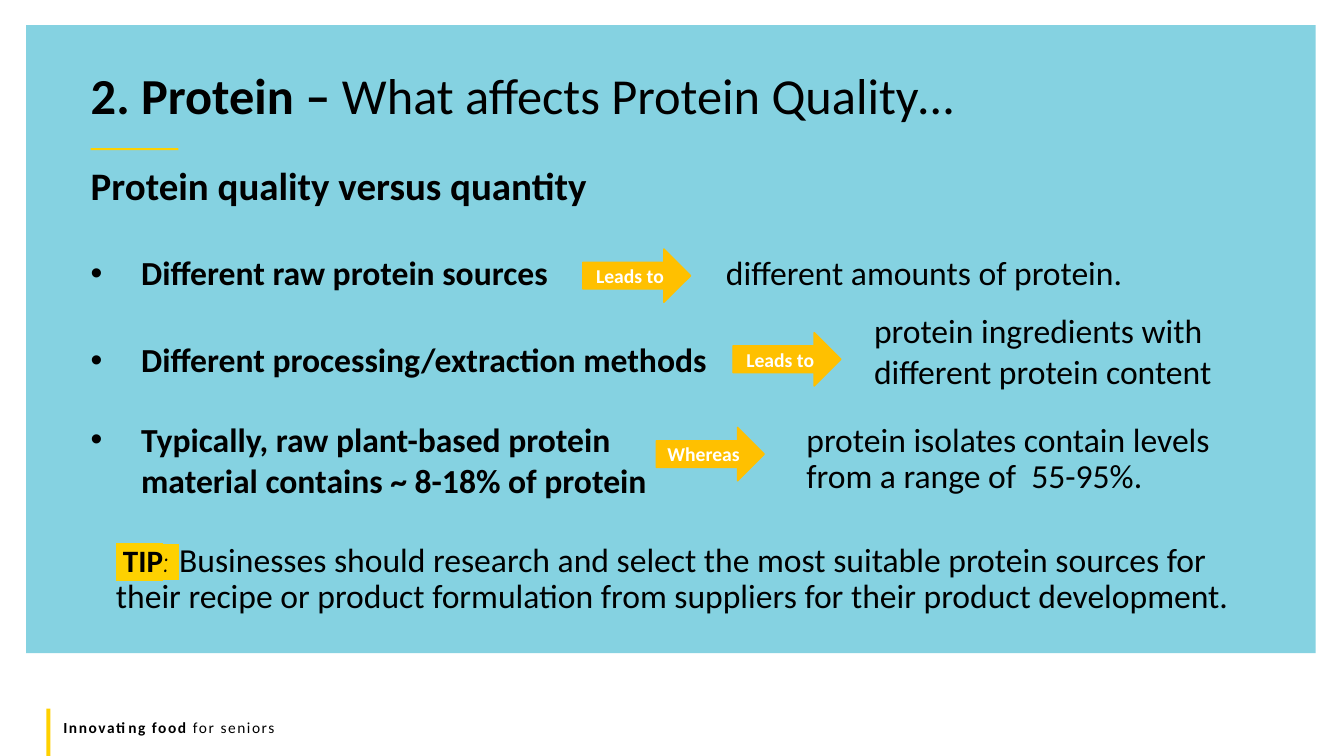
import pptx
import pptx.dml.color
import pptx.enum.shapes
import pptx.enum.text
import pptx.oxml
import pptx.oxml.ns
import pptx.util
from pptx.util import Inches

COLORS = {
    "panel": "85D2E1",
    "accent": "FFD100",
    "tip": "FED100",
    "arrow": "FFC000",
    "text": "000000",
    "arrow_text": "FFFFFF",
}
ANCHOR = pptx.enum.text.MSO_ANCHOR
SHAPE = pptx.enum.shapes.MSO_SHAPE


def rgb(name):
    return pptx.dml.color.RGBColor.from_string(COLORS[name])


def add_xml(parent, tag, **attributes):
    element = pptx.oxml.parse_xml(f"<a:{tag} {pptx.oxml.ns.nsdecls('a')}/>")
    for key, value in attributes.items():
        element.set(key, str(value))
    parent.append(element)
    return element


def add_span(para, text, size=24, bold=False, color="text", font="Calibri",
             highlight=None, spacing=None):
    """Append formatted text to a paragraph."""
    span = para.add_run()
    span.text = text
    span.font.size = pptx.util.Pt(size)
    span.font.bold = bold
    span.font.color.rgb = rgb(color)
    properties = span.font._element
    if spacing:
        properties.set("spc", str(spacing))
    if highlight:
        add_xml(add_xml(properties, "highlight"), "srgbClr", val=COLORS[highlight])
    span.font.name = font


def format_para(para, before=0, line=1.0, margin=0, bullet=False, tab=None):
    """Set spacing, indent, bullet and tab stop; margin is in inches."""
    properties = para._p.get_or_add_pPr()
    properties.set("marL", str(Inches(margin)))
    properties.set("indent", str(-Inches(margin) if bullet else 0))
    if bullet:
        add_xml(properties, "buFont", typeface="Arial")
        add_xml(properties, "buChar", char="•")
    else:
        add_xml(properties, "buNone")
    if tab:
        add_xml(add_xml(properties, "tabLst"), "tab", pos=Inches(tab), algn="l")
    para.space_before = pptx.util.Pt(before)
    para.line_spacing = line


def place(box, left, top, width, height):
    box.left, box.top = Inches(left), Inches(top)
    box.width, box.height = Inches(width), Inches(height)
    frame = box.text_frame
    frame.word_wrap = True
    frame.auto_size = pptx.enum.text.MSO_AUTO_SIZE.NONE
    frame.vertical_anchor = ANCHOR.TOP
    return frame


def add_block(slide, kind, left, top, width, height, color):
    block = slide.shapes.add_shape(
        kind, Inches(left), Inches(top), Inches(width), Inches(height))
    block.shadow.inherit = False
    block.fill.solid()
    block.fill.fore_color.rgb = rgb(color)
    block.line.fill.background()
    return block


def add_arrow(slide, left, top, label):
    arrow = add_block(slide, SHAPE.RIGHT_ARROW, left, top, 1.07, 0.53, "arrow")
    arrow.line.color.rgb = rgb("arrow")
    arrow.line.width = pptx.util.Pt(1)
    frame = arrow.text_frame
    frame.word_wrap = False
    frame.vertical_anchor = ANCHOR.MIDDLE
    para = frame.paragraphs[0]
    para.alignment = pptx.enum.text.PP_ALIGN.CENTER
    add_span(para, label, size=14, bold=True, color="arrow_text")


def add_text(slide, left, top, width, height, spans, line=1.0):
    box = slide.shapes.add_textbox(0, 0, 0, 0)
    para = place(box, left, top, width, height).paragraphs[0]
    format_para(para, line=line)
    for text, style in spans:
        add_span(para, text, **style)


def fill_title(title):
    para = place(title, 0.8, 0.7, 11.82, 0.64).paragraphs[0]
    format_para(para, line=0.8)
    para.alignment = pptx.enum.text.PP_ALIGN.LEFT
    add_span(para, "2. Protein – ", size=36, bold=True)
    add_span(para, "What affects Protein Quality…", size=36)


def fill_body(body):
    frame = place(body, 0.8, 1.61, 11.82, 4.74)
    heading = frame.paragraphs[0]
    format_para(heading, line=0.9)
    add_span(heading, "Protein quality versus quantity", size=27.8, bold=True)

    bullets = [
        ("Different raw protein sources", "different amounts of protein.", 34, 0.9),
        ("Different processing/extraction methods", None, 36, 0.9),
        ("Typically, raw plant-based protein", "material contains ~ 8-18% of protein", 28, 1.0),
    ]
    for index, (text, rest, before, line) in enumerate(bullets):
        para = frame.add_paragraph()
        format_para(para, before, line, margin=0.5, bullet=True,
                    tab=6.3 if index == 0 else None)
        add_span(para, text, bold=True)
        if index == 0:
            add_span(para, "\t" + rest)
        elif rest:
            para.add_line_break()
            add_span(para, rest, bold=True)

    tip = frame.add_paragraph()
    format_para(tip, before=31, line=0.9, margin=0.25)
    add_span(tip, " TIP", size=22.2, bold=True, highlight="tip")
    add_span(tip, ": ", size=22.2, font="Comic Neue", highlight="tip")
    add_span(tip, "Businesses should research and select the most suitable protein "
                  "sources for their recipe or product formulation from suppliers "
                  "for their product development.")


def main():
    deck = pptx.Presentation()
    deck.slide_width, deck.slide_height = Inches(13.33), Inches(7.5)
    slide = deck.slides.add_slide(deck.slide_layouts[1])
    title, body = slide.placeholders

    panel = add_block(slide, SHAPE.RECTANGLE, 0.26, 0.25, 12.79, 6.23, "panel")
    slide.shapes._spTree.insert(2, panel._element)
    add_block(slide, SHAPE.RECTANGLE, 0.9, 1.47, 0.87, 0.02, "accent")
    add_block(slide, SHAPE.RECTANGLE, 0.46, 7.03, 0.04, 0.47, "accent")
    add_text(slide, 0.53, 7.07, 12, 0.29, [
        ("Innovating food ", {"size": 11, "bold": True, "spacing": 110}),
        ("for seniors", {"size": 11, "spacing": 110}),
    ])

    fill_title(title)
    fill_body(body)
    for left, top, label in [(5.78, 2.47, "Leads to"), (7.27, 3.3, "Leads to"),
                             (6.51, 4.24, "Whereas")]:
        add_arrow(slide, left, top, label)
    add_text(slide, 8.57, 3.03, 3.82, 0.91,
             [("protein ingredients with different protein content", {})])
    add_text(slide, 7.9, 4.15, 4.4, 0.83,
             [("protein isolates contain levels from a range of  55-95%.", {})], line=0.9)
    deck.save("out.pptx")


if __name__ == "__main__":
    main()
